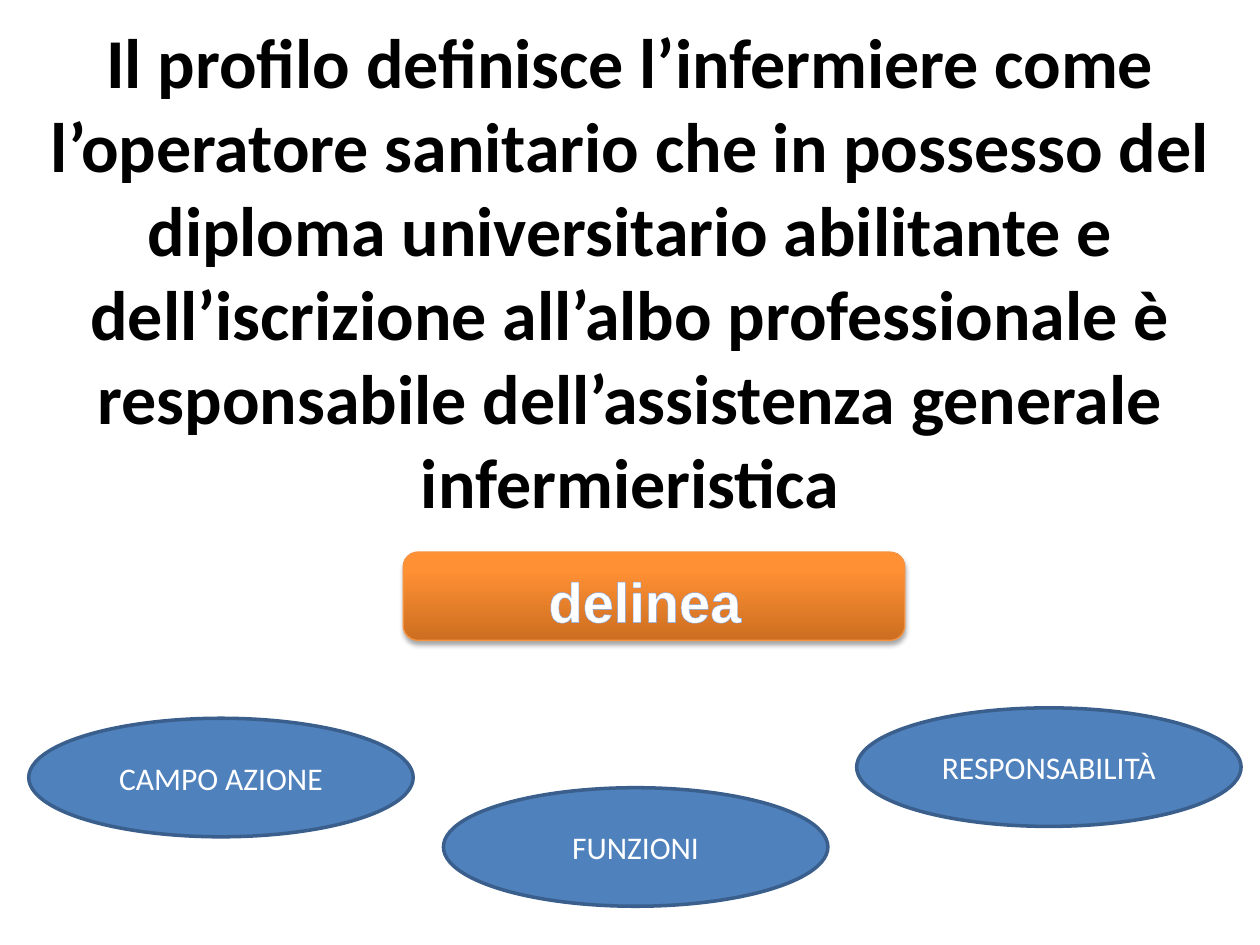
from lxml.etree import SubElement
from pptx import Presentation
from pptx.dml.color import RGBColor
from pptx.enum.shapes import MSO_SHAPE
from pptx.enum.text import MSO_ANCHOR, PP_ALIGN
from pptx.oxml import parse_xml
from pptx.oxml.ns import nsdecls, qn
from pptx.util import Cm, Pt


def rgb(value):
    return RGBColor.from_string(value)


def write(shape, text, size, font, color, bold, anchor):
    frame = shape.text_frame
    frame.word_wrap = True
    frame.vertical_anchor = anchor
    frame.text = text
    paragraph = frame.paragraphs[0]
    paragraph.alignment = PP_ALIGN.CENTER
    run = paragraph.runs[0]
    run.font.size = Pt(size)
    run.font.name = font
    run.font.bold = bold
    run.font.color.rgb = rgb(color)
    return run


prs = Presentation()
prs.slide_width, prs.slide_height = Cm(25.4), Cm(19.05)
slide = prs.slides.add_slide(prs.slide_layouts[6])
shapes = slide.shapes

definition = shapes.add_textbox(Cm(0), Cm(0.58), Cm(25.4), Cm(9.73))
write(
    definition,
    "Il profilo definisce l’infermiere come l’operatore sanitario che in possesso del "
    "diploma universitario abilitante e dell’iscrizione all’albo professionale è "
    "responsabile dell’assistenza generale infermieristica",
    40, "Calibri", "000000", True, MSO_ANCHOR.MIDDLE,
)

banner = shapes.add_shape(MSO_SHAPE.ROUNDED_RECTANGLE, Cm(8.13), Cm(11.13), Cm(10.11), Cm(1.78))
banner.fill.gradient()
banner.fill.gradient_angle = 90
stops = banner.fill._fill._gradFill.find(qn("a:gsLst"))
for stop in list(stops):
    stops.remove(stop)
for position, color in [(0, "CC6E20"), (80, "FF9034"), (100, "FF9136")]:
    stop = SubElement(stops, qn("a:gs"), pos=str(position * 1000))
    SubElement(stop, qn("a:srgbClr"), val=color)
banner.line.color.rgb = rgb("F69240")
banner.line.width = Pt(0.75)
banner.shadow.inherit = False
banner._element.spPr.find(qn("a:effectLst")).append(parse_xml(
    f'<a:outerShdw {nsdecls("a")} blurRad="{Pt(3.1)}" dist="{Pt(1.8)}" dir="5400000" rotWithShape="0">'
    '<a:srgbClr val="000000"><a:alpha val="35000"/></a:srgbClr></a:outerShdw>'
))

verb = shapes.add_textbox(Cm(10.72), Cm(11.3), Cm(4.57), Cm(1.63))
verb_run = write(verb, "delinea", 32, "Arial", "FFFFFF", True, MSO_ANCHOR.TOP)
verb_run.font._element.insert(0, parse_xml(
    f'<a:ln {nsdecls("a")} w="{Pt(2.48)}"><a:solidFill><a:srgbClr val="7EA6EA"/></a:solidFill></a:ln>'
))

for topic, left, top in [
    ("CAMPO AZIONE", 0.58, 14.48),
    ("FUNZIONI", 8.94, 15.88),
    ("RESPONSABILITÀ", 17.27, 14.27),
]:
    oval = shapes.add_shape(MSO_SHAPE.OVAL, Cm(left), Cm(top), Cm(7.75), Cm(2.39))
    oval.fill.solid()
    oval.fill.fore_color.rgb = rgb("4F81BD")
    oval.line.color.rgb = rgb("3A5F8C")
    oval.line.width = Pt(2)
    oval.shadow.inherit = False
    write(oval, topic, 18, "Calibri", "FFFFFF", False, MSO_ANCHOR.MIDDLE)

prs.save("out.pptx")
